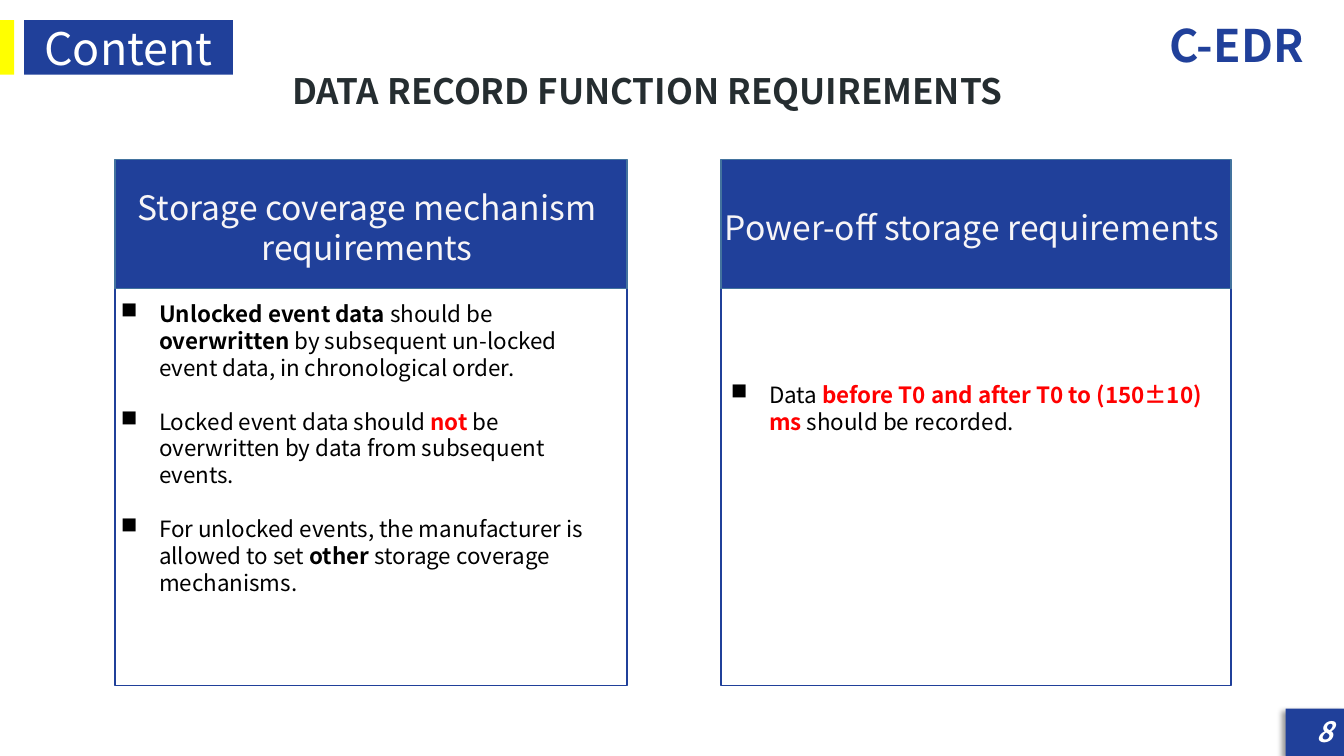
from lxml import etree
from pptx import Presentation
from pptx.dml.color import RGBColor
from pptx.enum.shapes import MSO_SHAPE
from pptx.enum.text import MSO_ANCHOR, PP_ALIGN
from pptx.oxml import parse_xml
from pptx.oxml.ns import nsdecls, qn
from pptx.util import Inches, Pt

RECTANGLE = MSO_SHAPE.RECTANGLE
TOP, MIDDLE = MSO_ANCHOR.TOP, MSO_ANCHOR.MIDDLE
LEFT, CENTER, RIGHT = PP_ALIGN.LEFT, PP_ALIGN.CENTER, PP_ALIGN.RIGHT

FONT = "Noto Sans CJK SC"
COLORS = {
    "blue": "20409A",
    "edge": "43739E",
    "yellow": "FFFF00",
    "white": "FFFFFF",
    "heading": "F7F5F7",
    "title": "252D30",
    "black": "000000",
    "red": "FF0000",
}


def color(name):
    return RGBColor.from_string(COLORS[name])


def add_run(paragraph, text, size=16, fill="black", bold=False, italic=False):
    run = paragraph.add_run()
    run.text = text
    font = run.font
    font.name, font.size, font.bold, font.italic = FONT, Pt(size), bold, italic
    font.color.rgb = color(fill)
    east_asian = etree.SubElement(font._element, qn("a:ea"))
    east_asian.set("typeface", FONT)


class SlideBuilder:
    def __init__(self, slide):
        self.slide = slide

    def rectangle(self, left, top, width, height, fill, line=None):
        shape = self.slide.shapes.add_shape(
            RECTANGLE, Inches(left), Inches(top), Inches(width), Inches(height))
        shape.shadow.inherit = False
        shape.fill.solid()
        shape.fill.fore_color.rgb = color(fill)
        if line:
            shape.line.color.rgb = color(line)
            shape.line.width = Pt(1)
        else:
            shape.line.fill.background()
        return shape

    def shadow(self, shape):
        effects = shape._element.spPr.find(qn("a:effectLst"))
        effects.append(parse_xml(
            f'<a:outerShdw {nsdecls("a")} blurRad="{Pt(4)}" dist="{Pt(3)}" '
            f'dir="{135 * 60000}" algn="tr" rotWithShape="0">'
            f'<a:srgbClr val="{COLORS["black"]}"><a:alpha val="40000"/></a:srgbClr>'
            '</a:outerShdw>'))

    def text_box(self, left, top, width, height, anchor=TOP, inset=None, wrap=True):
        box = self.slide.shapes.add_textbox(
            Inches(left), Inches(top), Inches(width), Inches(height))
        frame = box.text_frame
        frame.word_wrap = wrap
        frame.vertical_anchor = anchor
        if inset is not None:
            frame.margin_left = frame.margin_right = Inches(inset)
            frame.margin_top = frame.margin_bottom = Inches(inset)
        return frame

    def label(self, frame, text, align=LEFT, spacing=None, **style):
        paragraph = frame.paragraphs[0]
        paragraph.alignment = align
        paragraph.line_spacing = spacing
        add_run(paragraph, text, **style)

    def bullets(self, frame, items):
        for index, runs in enumerate(items):
            paragraph = frame.add_paragraph() if index else frame.paragraphs[0]
            paragraph.line_spacing = Pt(19.2)
            if index:
                paragraph.space_before = Pt(19.2)
            properties = paragraph._p.get_or_add_pPr()
            properties.set("marL", str(Inches(0.38)))
            properties.set("indent", str(-Inches(0.38)))
            etree.SubElement(properties, qn("a:buChar")).set("char", "■")
            for text, style in runs:
                add_run(paragraph, text, **style)

    def panel(self, left, width, heading, body_box, items):
        self.rectangle(left, 2.86, width, 3.94, "white", "blue")
        self.rectangle(left, 1.58, width, 1.28, "blue", "edge")
        frame = self.text_box(left - 0.04, 1.65, width, 1.21, MIDDLE, inset=0)
        self.label(frame, heading, CENTER, Pt(28.8), size=24, fill="heading")
        self.bullets(self.text_box(*body_box), items)


PLAIN = {}
BOLD = {"bold": True}
ALERT = {"bold": True, "fill": "red"}

STORAGE_ITEMS = [
    [("Unlocked event data ", BOLD), ("should be ", PLAIN), ("overwritten", BOLD),
     (" by subsequent un-locked event data, in chronological order.", PLAIN)],
    [("Locked event data should ", PLAIN), ("not ", ALERT),
     ("be overwritten by data from subsequent events.", PLAIN)],
    [("For unlocked events, the manufacturer is allowed to set ", PLAIN),
     ("other ", BOLD), ("storage coverage mechanisms.", PLAIN)],
]
POWER_OFF_ITEMS = [
    [("Data ", PLAIN), ("before T0 and after T0 to (150±10) ms ", ALERT),
     ("should be recorded.", PLAIN)],
]


def main():
    presentation = Presentation()
    presentation.slide_width = Inches(13.33)
    presentation.slide_height = Inches(7.5)
    builder = SlideBuilder(presentation.slides.add_slide(presentation.slide_layouts[6]))

    # Page number and document name
    builder.shadow(builder.rectangle(12.75, 7.03, 0.59, 0.47, "blue"))
    builder.label(builder.text_box(10.29, 0.13, 2.74, 0.64), "C-EDR", RIGHT,
                  size=32, fill="blue", bold=True)
    builder.label(builder.text_box(10.32, 7.06, 3, 0.4, MIDDLE), "8", RIGHT,
                  size=20, fill="white", bold=True, italic=True)

    # Section tag
    tag = builder.rectangle(0.24, 0.2, 2.07, 0.54, "blue").text_frame
    tag.vertical_anchor = MIDDLE
    builder.label(tag, "Content", CENTER, size=32, fill="white")
    builder.rectangle(0, 0.2, 0.14, 0.54, "yellow")

    # Requirement panels
    builder.panel(1.14, 5.08, "Storage coverage mechanism requirements",
                  (1.1, 2.93, 5.1, 3.87), STORAGE_ITEMS)
    builder.panel(7.15, 5.06, "Power-off storage requirements",
                  (7.15, 3.73, 5.08, 0.91), POWER_OFF_ITEMS)

    # Slide title
    builder.label(builder.text_box(2.87, 0.66, 7.6, 0.48, inset=0.03, wrap=False),
                  "DATA RECORD FUNCTION REQUIREMENTS", size=25, fill="title", bold=True)

    presentation.save("out.pptx")


if __name__ == "__main__":
    main()
